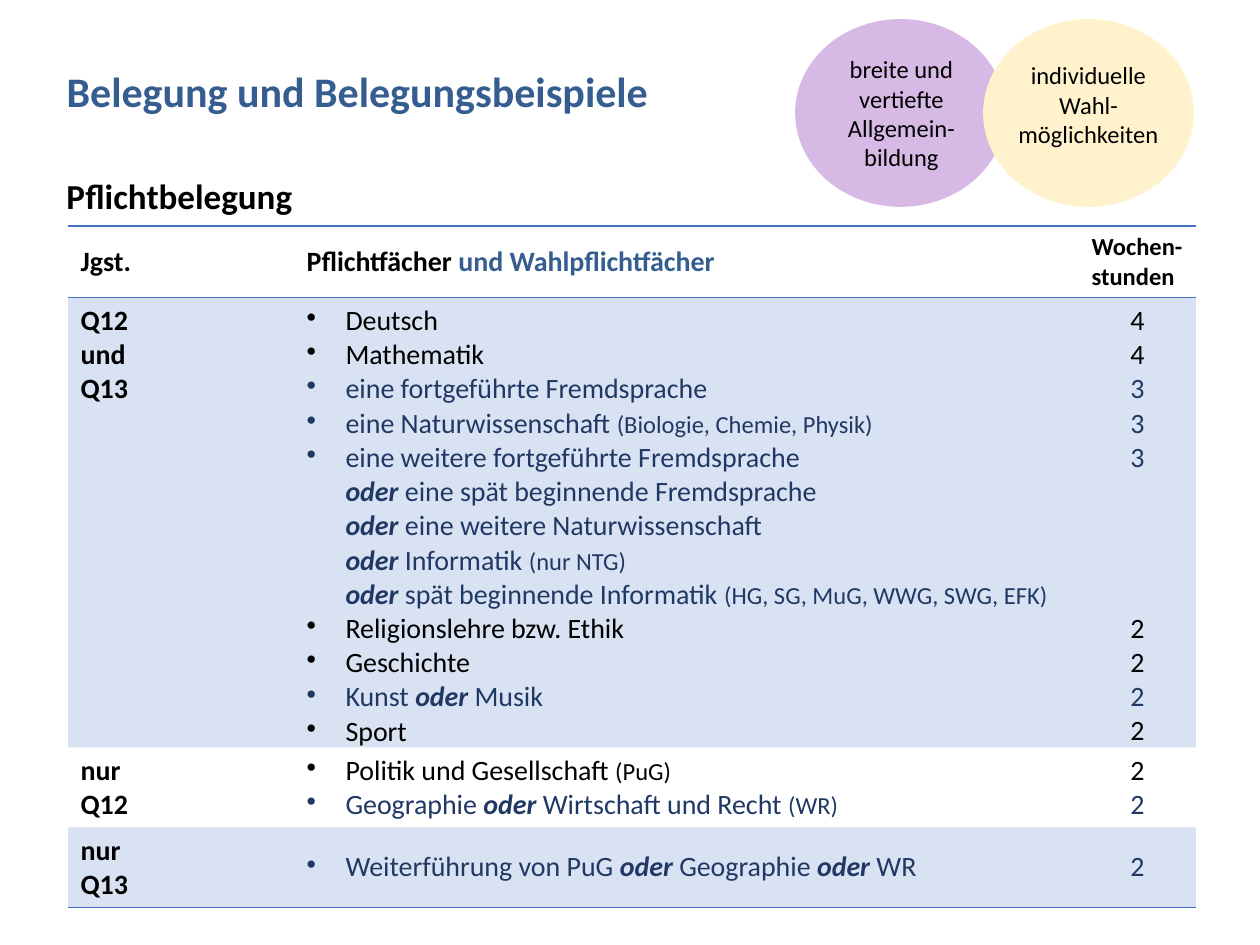
from lxml import etree
from pptx import Presentation
from pptx.dml.color import RGBColor
from pptx.enum.shapes import MSO_SHAPE
from pptx.enum.text import MSO_ANCHOR, MSO_AUTO_SIZE, PP_ALIGN
from pptx.oxml.ns import qn
from pptx.util import Emu, Pt

OVAL = MSO_SHAPE.OVAL
TOP, MIDDLE = MSO_ANCHOR.TOP, MSO_ANCHOR.MIDDLE
LEFT, CENTER = PP_ALIGN.LEFT, PP_ALIGN.CENTER
FIXED = MSO_AUTO_SIZE.NONE

BLACK = RGBColor(0x00, 0x00, 0x00)
STEEL = RGBColor(0x35, 0x5D, 0x90)
NAVY = RGBColor(0x20, 0x38, 0x64)
BLUE = RGBColor(0x44, 0x72, 0xC4)
LILAC = RGBColor(0xD7, 0xB9, 0xE5)
CREAM = RGBColor(0xFF, 0xF2, 0xCC)

SCALE = 914400 / 126
PLAIN = "{2D5ABB26-0587-4C30-8999-92F81FD0307C}"  # table style without grid
PITCH = 19.5  # points per line of 16 pt text


def px(n):
    return Emu(round(n * SCALE))


class Deck:
    font = "Calibri"

    def __init__(self):
        self.prs = Presentation()
        self.prs.slide_width, self.prs.slide_height = px(1260), px(945)
        self.slide = self.prs.slides.add_slide(self.prs.slide_layouts[5])

    def lines(self, frame, texts, size=16, color=BLACK, bold=False, align=LEFT):
        """Fill a text frame with one paragraph a text."""
        frame.word_wrap = True
        return [self.line(frame, i, text, size, color, bold, align)
                for i, text in enumerate(texts)]

    def line(self, frame, i, text, size=16, color=BLACK, bold=False, align=LEFT):
        """A bar parts runs: 'oder' is bold italic, brackets are small."""
        para = frame.add_paragraph() if i else frame.paragraphs[0]
        para.alignment = align
        font = para.font
        font.name, font.size, font.bold = self.font, Pt(size), bold
        font.color.rgb = color
        for n, row in enumerate(text.split("\n")):
            if n:
                para.add_line_break()
            for part in row.split("|"):
                if not part:
                    continue
                run = para.add_run()
                run.text = part
                if part.strip() == "oder":
                    run.font.bold = run.font.italic = True
                elif part.startswith("("):
                    run.font.size = Pt(14)
        return para

    def title(self, text, x, y, w, h):
        box = self.slide.shapes.title
        box.left, box.top, box.width, box.height = map(px, (x, y, w, h))
        frame = box.text_frame
        frame.auto_size, frame.vertical_anchor = FIXED, TOP
        self.lines(frame, [text], 24, STEEL, True)

    def text(self, texts, x, y, w, h, **style):
        box = self.slide.shapes.add_textbox(*map(px, (x, y, w, h)))
        self.lines(box.text_frame, texts, **style)

    def oval(self, x, y, w, h, color):
        oval = self.slide.shapes.add_shape(OVAL, *map(px, (x, y, w, h)))
        oval.shadow.inherit = False
        oval.fill.solid()
        oval.fill.fore_color.rgb = oval.line.color.rgb = color
        oval.line.width = Pt(1)

    def table(self, x, y, cols, rows):
        frame = self.slide.shapes.add_table(
            len(rows), len(cols), px(x), px(y), px(sum(cols)), px(sum(rows)))
        table = frame.table
        table.first_row = table.horz_banding = False
        table._tbl.tblPr.find(qn("a:tableStyleId")).text = PLAIN
        for col, w in zip(table.columns, cols):
            col.width = px(w)
        for row, h in zip(table.rows, rows):
            row.height = px(h)
        return table

    def tint(self, cell):
        cell.fill.solid()
        cell.fill.fore_color.rgb = BLUE
        tone = cell._tc.tcPr.find(".//" + qn("a:srgbClr"))
        etree.SubElement(tone, qn("a:alpha"), val="20000")

    def rule(self, cell, *sides):
        """Draw cell borders; sides are given in schema order."""
        props = cell._tc.get_or_add_tcPr()
        for i, side in enumerate(sides):
            edge = etree.Element(qn("a:ln" + side), w=str(Pt(1)))
            fill = etree.SubElement(edge, qn("a:solidFill"))
            etree.SubElement(fill, qn("a:srgbClr"), val=str(BLUE))
            props.insert(i, edge)

    def bullet(self, para):
        props = para._p.get_or_add_pPr()
        props.set("marL", str(px(39)))
        props.set("indent", str(px(-39)))
        mark = etree.Element(qn("a:buChar"), char="•")
        props.find(qn("a:defRPr")).addprevious(mark)

    def items(self, left, right, items):
        """Bulleted subjects, with their hours on the same lines."""
        extra = 0
        for i, (text, hours, color) in enumerate(items):
            self.bullet(self.line(left.text_frame, i, text, color=color))
            para = self.line(right.text_frame, i, hours, color=color, align=CENTER)
            if extra:
                para.space_before = Pt(extra * PITCH)
            extra = text.count("\n")


CORE = [
    ("Deutsch", "4", BLACK),
    ("Mathematik", "4", BLACK),
    ("eine fortgeführte Fremdsprache", "3", NAVY),
    ("eine Naturwissenschaft |(Biologie, Chemie, Physik)", "3", NAVY),
    ("eine weitere fortgeführte Fremdsprache \n"
     "oder |eine spät beginnende Fremdsprache\n"
     "oder |eine weitere Naturwissenschaft\n"
     "oder |Informatik |(nur NTG)\n"
     "oder |spät beginnende Informatik |(HG, SG, MuG, WWG, SWG, EFK)", "3", NAVY),
    ("Religionslehre bzw. Ethik", "2", BLACK),
    ("Geschichte", "2", BLACK),
    ("Kunst |oder| Musik", "2", NAVY),
    ("Sport", "2", BLACK),
]
FIRST = [
    ("Politik und Gesellschaft |(PuG)", "2", BLACK),
    ("Geographie |oder| Wirtschaft und Recht |(WR)", "2", NAVY),
]
LAST = [("Weiterführung von PuG |oder| Geographie |oder |WR", "2", NAVY)]
YEARS = [(["Q12", "und", "Q13"], CORE), (["nur Q12"], FIRST), (["nur Q13"], LAST)]


def main():
    deck = Deck()

    # Headings
    deck.title("Belegung und Belegungsbeispiele", 54, 59, 1181, 110)
    deck.text(["Pflichtbelegung"], 54, 168, 1140, 55, size=20, bold=True)

    # Table header
    table = deck.table(68, 226, [110, 58, 58, 785, 117], [71, 450, 80, 80])
    heads = {0: ("Jgst.", 16), 3: ("Pflichtfächer |und Wahlpflichtfächer", 16),
             4: ("Wochen-stunden", 14)}
    for col, (text, size) in heads.items():
        cell = table.cell(0, col)
        paras = deck.lines(cell.text_frame, [text], size, bold=True)
        cell.vertical_anchor = TOP if col == 4 else MIDDLE
        if col == 3:
            paras[0].runs[1].font.color.rgb = STEEL

    # Table body
    for row, (years, items) in enumerate(YEARS, 1):
        label, left, right = (table.cell(row, col) for col in (0, 3, 4))
        deck.lines(label.text_frame, years, bold=True)
        deck.items(left, right, items)
        right.vertical_anchor = MIDDLE
    table.cell(3, 3).vertical_anchor = MIDDLE
    for col in range(5):
        table.cell(1, col).margin_bottom = 0
        for row in (1, 3):
            deck.tint(table.cell(row, col))
        deck.rule(table.cell(0, col), "T", "B")
        deck.rule(table.cell(3, col), "B")

    # Overlapping goals
    deck.oval(796, 20, 209, 186, LILAC)
    deck.text(["breite und vertiefte Allgemein-bildung"], 819, 48, 165, 131,
              size=14, align=CENTER)
    deck.oval(984, 20, 209, 186, CREAM)
    deck.text(["individuelle", "Wahl-", "möglichkeiten"], 999, 54, 179, 102,
              size=14, align=CENTER)

    deck.prs.save("out.pptx")


if __name__ == "__main__":
    main()
